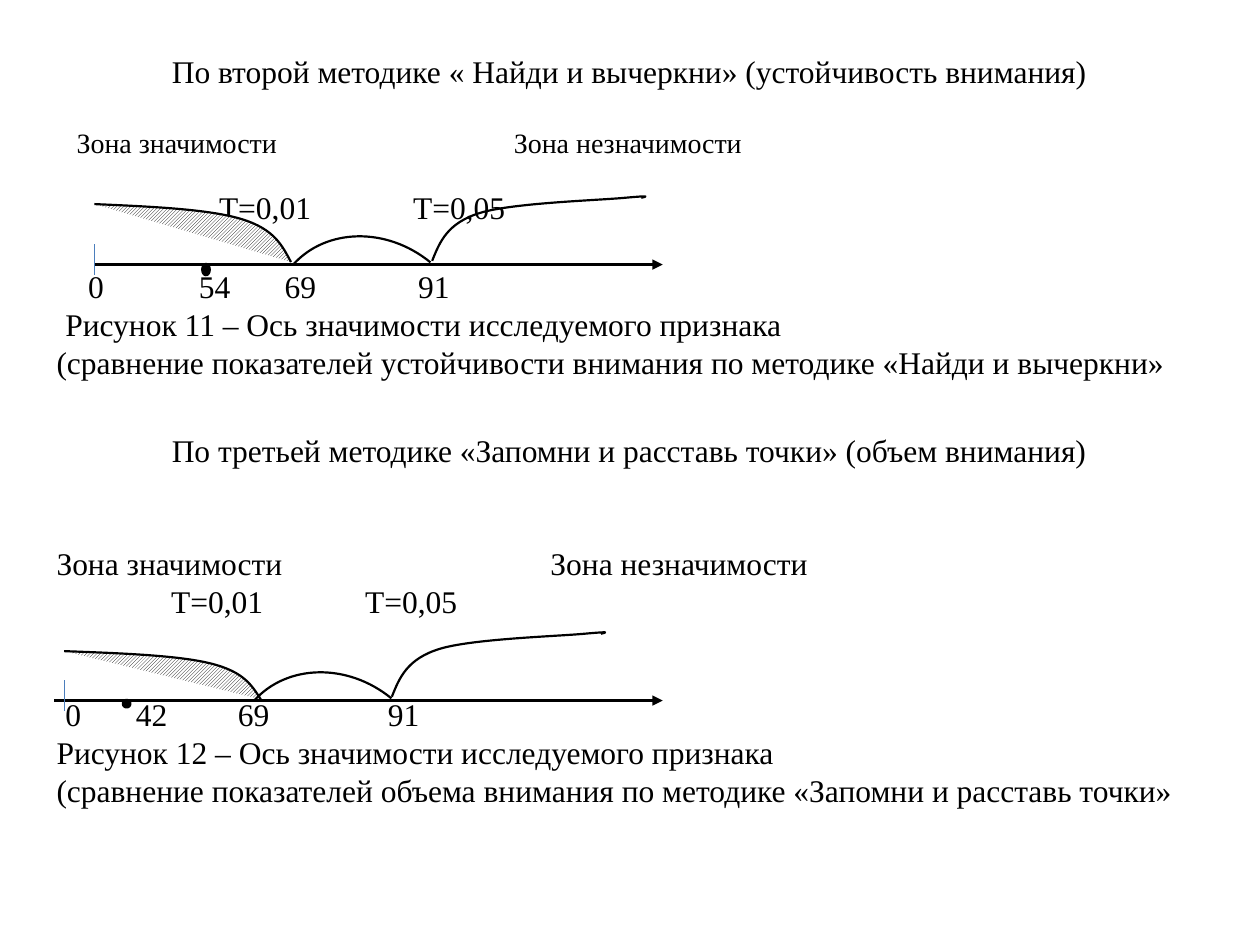
import copy
import pptx
import pptx.util
import pptx.dml.color
import pptx.enum.dml
import pptx.enum.shapes
import pptx.enum.text
import lxml.etree

INK, BLUE = "000000", "4B7EBC"
ROW = 0.3
ALIGN = pptx.enum.text.PP_ALIGN

# text, gap above, tab stops, centred
BODY = [
    ("По второй методике « Найди и вычеркни» (устойчивость внимания)", 0, [], True),
    ("\t0\t54\t69\t91", 1.41, [0.25, 1.13, 1.81, 2.87], False),
    ("\tРисунок 11 – Ось значимости исследуемого признака", 0, [0.07], False),
    ("(сравнение показателей устойчивости внимания по методике «Найди и вычеркни»", 0, [], False),
    ("По третьей методике «Запомни и расставь точки» (объем внимания)", 0.4, [], True),
    ("Зона значимости\tЗона незначимости", 0.6, [3.92], False),
    ("\tТ=0,01\tТ=0,05", 0, [0.91, 2.45], False),
    ("\t0\t42\t69\t91", 0.6, [0.07, 0.63, 1.44, 2.63], False),
    ("Рисунок 12 – Ось значимости исследуемого признака", 0, [], False),
    ("(сравнение показателей объема внимания по методике «Запомни и расставь точки»", 0, [], False),
]
ZONES = [
    ("Зона значимости\tЗона незначимости", 0, [3.47], False),
    ("\tТ=0,01\tТ=0,05", 0.23, [1.13, 2.67], False),
]
AXES = [
    dict(y=2.1, left=0.75, zero=0.75, tick=(1.94, 2.18), dot=(1.61, 0.08),
         shade=(2.31, 2.08), tall=1, rise=(3.43, 2.07), arc=(2.46, 1.74)),
    dict(y=5.56, left=0.43, zero=0.51, tick=(5.4, 5.64), dot=(0.98, 0.05),
         shade=(2.07, 5.55), tall=0.83, rise=(3.11, 5.53), arc=(2.15, 5.2)),
]
SHADE = [(0, 0), (-0.07, -0.13), (-0.13, -0.26), (-0.39, -0.34),
         (-0.65, -0.42), (-1.11, -0.44), (-1.56, -0.46)]
RISE = [(0, 0), (0.06, -0.15), (0.12, -0.3), (0.38, -0.38),
        (0.64, -0.46), (1.32, -0.48), (1.53, -0.5),
        (1.75, -0.52), (1.7, -0.51), (1.66, -0.5)]
ARC = [(0.06, 0.75), (0.51, 0.73), (0.86, 0.4), (0.86, 0.01), (0, 0)]
TURN = 221.8

Inches, Pt = pptx.util.Inches, pptx.util.Pt
deck = pptx.Presentation()
deck.slide_width, deck.slide_height = Inches(10), Inches(7.5)
slide = deck.slides.add_slide(deck.slide_layouts[6])
shapes = slide.shapes


def color(code):
    return pptx.dml.color.RGBColor.from_string(code)


def stroke(item, code, width):
    item.line.color.rgb = color(code)
    item.line.width = Pt(width)


def tag(name):
    return "{http://schemas.openxmlformats.org/drawingml/2006/main}" + name


def add_sub(node, name, **attrs):
    return lxml.etree.SubElement(node, tag(name), **attrs)


def write(box, inset, rows, sizes):
    frame = shapes.add_textbox(*map(Inches, box)).text_frame
    frame.word_wrap = True
    frame.margin_top = Inches(inset)
    for i, (text, gap, stops, mid) in enumerate(rows):
        para = frame.add_paragraph() if i else frame.paragraphs[0]
        para.text = text
        para.alignment = ALIGN.CENTER if mid else ALIGN.LEFT
        para.line_spacing = Inches(ROW)
        para.space_before = Inches(gap)
        font = para.runs[0].font
        font.name, font.size = "Times New Roman", Pt(sizes[i])
        font.color.rgb = color(INK)
        if stops:
            tabs = add_sub(para.runs[0]._r.getparent().get_or_add_pPr(), "tabLst")
            for stop in stops:
                add_sub(tabs, "tab", pos=str(Inches(stop)), algn="l")


def line(x1, y1, x2, y2, code, width, arrow=False):
    item = shapes.add_connector(pptx.enum.shapes.MSO_CONNECTOR.STRAIGHT,
                                *map(Inches, (x1, y1, x2, y2)))
    stroke(item, code, width)
    if arrow:
        add_sub(item.line._get_or_add_ln(), "tailEnd", type="triangle")
    add_sub(item._element.spPr, "effectLst")


def curve(start, knots, tall=1):
    points = [(Inches(start[0] + x), Inches(start[1] + y * tall)) for x, y in knots]
    pen = shapes.build_freeform(*points[0])
    pen.add_line_segments(points[1:], close=False)
    item = pen.convert_to_shape()
    item.shadow.inherit = False
    item.fill.background()
    stroke(item, INK, 1.25)
    route = next(item._element.iter(tag("path")))
    steps = route.findall(tag("lnTo"))
    for i in range(0, len(steps) - 2, 3):
        cubic = lxml.etree.Element(tag("cubicBezTo"))
        steps[i].addprevious(cubic)
        for step in steps[i:i + 3]:
            cubic.append(step[0])
            route.remove(step)
    return item, route


def hatch(item):
    item.fill.patterned()
    item.fill.pattern = pptx.enum.dml.MSO_PATTERN.DARK_UPWARD_DIAGONAL
    item.fill.fore_color.rgb = color(INK)
    item.fill.back_color.rgb = color("FFFFFF")


def bow(start):
    item, route = curve(start, ARC)
    item.rotation = TURN
    wedge = copy.deepcopy(route)
    wedge.set("stroke", "0")
    add_sub(wedge, "close")
    route.addnext(wedge)
    route.set("fill", "none")
    route.remove(route.find(tag("lnTo")))


def draw(axis):
    y = axis["y"]
    line(axis["left"], y, 4.83, y, INK, 2)
    line(4.76, y, 5.26, y, INK, 1.75, True)
    hatch(curve(axis["shade"], SHADE, axis["tall"])[0])
    curve(axis["rise"], RISE)
    bow(axis["arc"])
    x, high = axis["dot"]
    dot = shapes.add_shape(pptx.enum.shapes.MSO_SHAPE.FLOWCHART_CONNECTOR,
                           *map(Inches, (x, y, 0.05, high)))
    dot.shadow.inherit = False
    dot.fill.solid()
    dot.fill.fore_color.rgb = color(INK)
    stroke(dot, INK, 2)
    top, base = axis["tick"]
    if axis["zero"] == axis["left"]:
        line(axis["zero"], y, axis["zero"], base, BLUE, 0.75)
        base = y
    line(axis["zero"], top, axis["zero"], base, BLUE, 0.75)


write((0.35, 0.36, 9.29, 6.61), 0.05, BODY, [18] * len(BODY))
write((0.51, 0.7, 7.32, 1.14), 0.26, ZONES, [16, 18])
for axis in AXES:
    draw(axis)
deck.save("out.pptx")
